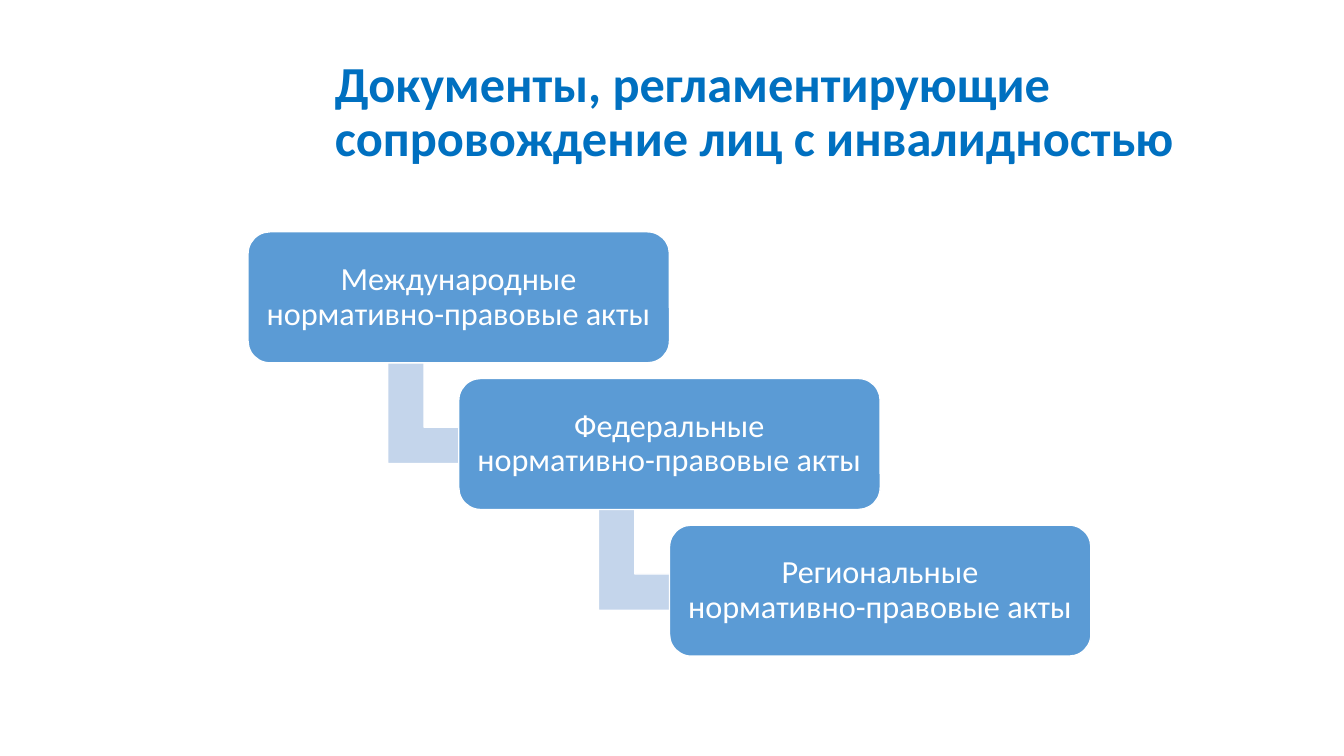
from pptx import Presentation, util as u
from pptx.dml.color import RGBColor
from pptx.enum import shapes, text

# Content
TITLE = "Документы, регламентирующие сопровождение лиц с инвалидностью"
STEPS = [
    ["Международные нормативно-правовые акты"],
    ["Федеральные", "нормативно-правовые акты"],
    ["Региональные", "нормативно-правовые акты"],
]

# Style and grid, in inches
HUE = {"title": "0070C0", "box": "5B9BD5", "arrow": "C4D5EB", "white": "FFFFFF"}
FONT = "Calibri"
LEFT, TOP = 2.46, 2.3
BOX_W, BOX_H = 4.18, 1.3
STEP_X, STEP_Y = BOX_W / 2, 1.455
ARROW_W, ARROW_H = 1.1, 1.25
ARROW_DX, ARROW_DY = 1.46, 1.22


def color(name):
    return RGBColor.from_string(HUE[name])


def add_run(par, words, size, hue, bold=False):
    run = par.add_run()
    run.text = words
    run.font.name, run.font.size, run.font.bold = FONT, u.Pt(size), bold
    run.font.color.rgb = color(hue)


def add_part(slide, kind, box, hue, adjust):
    part = slide.shapes.add_shape(kind, *map(u.Inches, box))
    part.shadow.inherit = False
    part.fill.solid()
    part.fill.fore_color.rgb = color(hue)
    part.line.color.rgb = color("white")
    part.line.width = u.Pt(1)
    for i, value in enumerate(adjust):
        part.adjustments[i] = value
    return part


def add_step(slide, i, lines):
    x, y = LEFT + i * STEP_X, TOP + i * STEP_Y
    # Arrow to the next step, its head tucked under the next box
    if i < len(STEPS) - 1:
        arrow = add_part(slide, shapes.MSO_SHAPE.BENT_UP_ARROW,
                         (x + ARROW_DX, y + ARROW_DY, ARROW_W, ARROW_H),
                         "arrow", (0.328, 0.25, 0.358))
        arrow.rotation = 90
    # Box with its label
    box = add_part(slide, shapes.MSO_SHAPE.ROUNDED_RECTANGLE,
                   (x, y, BOX_W, BOX_H), "box", (0.167,))
    frame = box.text_frame
    frame.word_wrap = True
    frame.vertical_anchor = text.MSO_ANCHOR.MIDDLE
    frame.margin_left = frame.margin_right = u.Inches(0.1)
    frame.margin_top = frame.margin_bottom = u.Inches(0.1)
    par = frame.paragraphs[0]
    par.alignment, par.line_spacing = text.PP_ALIGN.CENTER, 0.9
    for n, line in enumerate(lines):
        if n:
            par.add_line_break()
        add_run(par, line, 23, "white")


def main():
    deck = Presentation()
    deck.slide_width, deck.slide_height = u.Inches(13.33), u.Inches(7.5)
    slide = deck.slides.add_slide(deck.slide_layouts[5])

    # Title
    title = slide.shapes.title
    title.left, title.top = u.Inches(3.22), u.Inches(0.4)
    title.width, title.height = u.Inches(9.2), u.Inches(1.45)
    title.text_frame.word_wrap = True
    title.text_frame.auto_size = text.MSO_AUTO_SIZE.NONE
    title.text_frame.vertical_anchor = text.MSO_ANCHOR.MIDDLE
    par = title.text_frame.paragraphs[0]
    par.alignment, par.line_spacing = text.PP_ALIGN.LEFT, 0.9
    add_run(par, TITLE, 36, "title", True)

    # Staircase of steps
    for i, lines in enumerate(STEPS):
        add_step(slide, i, lines)

    deck.save("out.pptx")


if __name__ == "__main__":
    main()
